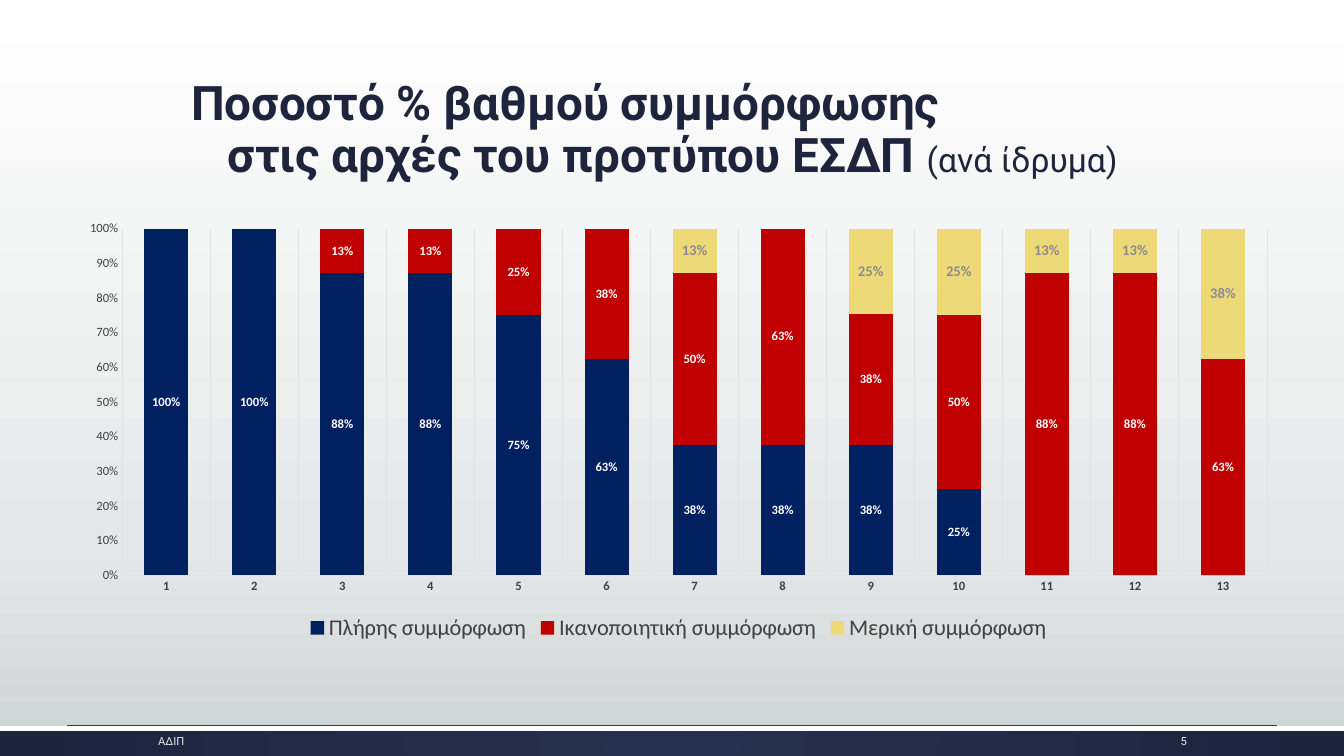
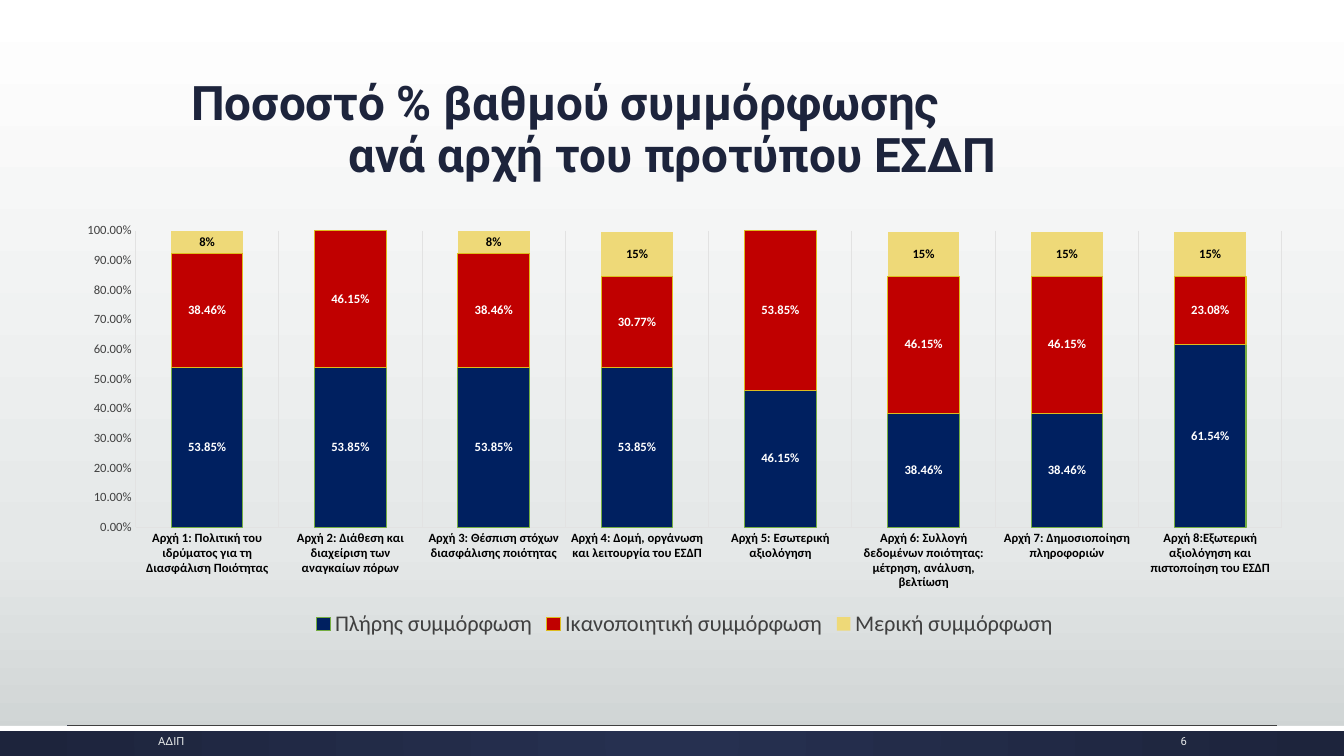
from dataclasses import dataclass

from lxml.etree import SubElement
from pptx import Presentation
from pptx.chart.data import CategoryChartData
from pptx.dml.color import RGBColor as Rgb
from pptx.enum.chart import XL_CHART_TYPE as ChartType
from pptx.enum.chart import XL_LEGEND_POSITION as LegendPosition
from pptx.enum.chart import XL_TICK_MARK as TickMark
from pptx.enum.shapes import MSO_CONNECTOR as Connector
from pptx.enum.shapes import MSO_SHAPE as Preset
from pptx.enum.text import MSO_ANCHOR as Anchor
from pptx.enum.text import PP_ALIGN as Align
from pptx.oxml import parse_xml
from pptx.oxml.ns import nsdecls, qn
from pptx.util import Inches, Pt


@dataclass(frozen=True)
class Theme:
    """Colours, fonts and type sizes of the deck."""

    heading_font: str = "Roboto"
    chart_font: str = "Calibri"
    navy: str = "1D243C"
    navy_light: str = "263050"
    white: str = "FFFFFF"
    black: str = "000000"
    mist: str = "E5E8E8"
    fog: str = "CDD2D2"
    grid: str = "E2E2E2"
    chart_text: str = "404040"
    muted: str = "8C8C8C"
    full: str = "002060"
    satisfactory: str = "C00000"
    partial: str = "EED978"
    spare: str = "AC9FC6"
    green_edge: str = "74AD41"
    gold_edge: str = "DEBC1D"
    title_size: float = 34
    subtitle_size: float = 24
    footer_size: float = 8
    axis_size: float = 9
    label_size: float = 9
    large_label_size: float = 10.5
    legend_size: float = 16


THEME = Theme()


@dataclass(frozen=True)
class Level:
    """One compliance level; without a label format it stays unlabelled."""

    name: str
    values: list
    color: str
    label_color: str = THEME.white
    label_size: float = THEME.label_size
    label_format: str = "0%;;"
    edge: str = ""


FULL, SATISFACTORY, PARTIAL = (
    "Πλήρης συμμόρφωση",
    "Ικανοποιητική συμμόρφωση",
    "Μερική συμμόρφωση",
)
TITLE_START = "Ποσοστό % βαθμού συμμόρφωσης"
FOOTER = "ΑΔΙΠ"
PRINCIPLES = [
    "Αρχή 1: Πολιτική του ιδρύματος για τη Διασφάλιση Ποιότητας",
    "Αρχή 2: Διάθεση και διαχείριση των αναγκαίων πόρων",
    "Αρχή 3: Θέσπιση στόχων διασφάλισης ποιότητας",
    "Αρχή 4: Δομή, οργάνωση και λειτουργία του ΕΣΔΠ",
    "Αρχή 5: Εσωτερική αξιολόγηση",
    "Αρχή 6: Συλλογή δεδομένων ποιότητας: μέτρηση, ανάλυση, βελτίωση",
    "Αρχή 7: Δημοσιοποίηση πληροφοριών",
    "Αρχή 8:Εξωτερική αξιολόγηση και πιστοποίηση του ΕΣΔΠ",
]
BY_INSTITUTION = [
    Level(FULL, [1, 1, 0.88, 0.88, 0.75, 0.63, 0.38, 0.38, 0.38, 0.25, 0, 0, 0],
          THEME.full),
    Level(SATISFACTORY,
          [0, 0, 0.13, 0.13, 0.25, 0.38, 0.5, 0.63, 0.38, 0.5, 0.88, 0.88, 0.63],
          THEME.satisfactory),
    Level(PARTIAL, [0, 0, 0, 0, 0, 0, 0.13, 0, 0.25, 0.25, 0.13, 0.13, 0.38],
          THEME.partial, THEME.muted, THEME.large_label_size),
]
BY_PRINCIPLE = [
    Level(FULL, [0.5385, 0.5385, 0.5385, 0.5385, 0.4615, 0.3846, 0.3846, 0.6154],
          THEME.full, label_format="0.00%", edge=THEME.green_edge),
    Level(SATISFACTORY,
          [0.3846, 0.4615, 0.3846, 0.3077, 0.5385, 0.4615, 0.4615, 0.2308],
          THEME.satisfactory, label_format="0.00%", edge=THEME.gold_edge),
    Level(PARTIAL, [0.08, 0, 0.08, 0.15, 0, 0.15, 0.15, 0.15],
          THEME.partial, THEME.black),
    Level("Series 4", [0] * len(PRINCIPLES), THEME.spare, label_format=""),
]


def style_font(font, size, color, bold=False, name=THEME.chart_font):
    """Set face, size, colour and weight of a font."""
    font.name, font.size, font.bold = name, Pt(size), bold
    font.color.rgb = Rgb.from_string(color)


def fill_solid(fill, color):
    """Fill with one colour."""
    fill.solid()
    fill.fore_color.rgb = Rgb.from_string(color)


def stroke(line, color, width=0.75):
    """Give a line its colour and width."""
    fill_solid(line.fill, color)
    line.width = Pt(width)


def fill_gradient(fill, owner, stops, radial=False):
    """Fill with a vertical or radial gradient of (percent, colour) stops."""
    fill.gradient()
    gradient = owner.find(".//" + qn("a:gradFill"))
    for child in list(gradient):
        gradient.remove(child)
    stop_list = SubElement(gradient, qn("a:gsLst"))
    for percent, color in stops:
        stop = SubElement(stop_list, qn("a:gs"), pos=str(percent * 1000))
        SubElement(stop, qn("a:srgbClr"), val=color)
    if radial:
        focus = SubElement(gradient, qn("a:path"), path="circle")
        SubElement(focus, qn("a:fillToRect"), dict.fromkeys("ltrb", "50000"))
    else:
        SubElement(gradient, qn("a:lin"), ang="5400000", scaled="0")


def add_band(page, top, height):
    """Add a full-width band without outline."""
    band = page.shapes.add_shape(
        Preset.RECTANGLE, 0, Inches(top), Inches(13.33), Inches(height))
    band.shadow.inherit = False
    band.line.fill.background()
    return band


def add_rule(page):
    """Add the thin line above the footer."""
    rule = page.shapes.add_connector(
        Connector.STRAIGHT, Inches(0.67), Inches(7.19), Inches(12.67), Inches(7.19))
    stroke(rule.line, THEME.chart_text, 0.25)
    SubElement(rule.element.spPr, qn("a:effectLst"))


def add_text_box(page, left, top, width, height, text, anchor):
    """Add a wrapping text box and return its text frame."""
    box = page.shapes.add_textbox(*map(Inches, (left, top, width, height)))
    frame = box.text_frame
    frame.word_wrap = True
    frame.vertical_anchor = anchor
    frame.text = text
    return frame


def add_footer_text(page, left, width, text, align):
    """Add one small text in the footer band."""
    frame = add_text_box(page, left, 7.22, width, 0.26, text, Anchor.MIDDLE)
    para = frame.paragraphs[0]
    para.alignment = align
    style_font(para.runs[0].font, THEME.footer_size, THEME.mist,
               name=THEME.heading_font)


def add_title(page, second_line, aside):
    """Add the two-line title, with an optional lighter aside."""
    frame = add_text_box(page, 1.47, 0.51, 10.4, 1.35,
                         f"{TITLE_START}\n{second_line}", Anchor.BOTTOM)
    first, second = frame.paragraphs
    first.alignment, second.alignment = Align.LEFT, Align.CENTER
    first._p.get_or_add_pPr().set("marL", str(Inches(0.33)))
    for para in frame.paragraphs:
        para.line_spacing = 0.9
        style_font(para.runs[0].font, THEME.title_size, THEME.navy, True,
                   THEME.heading_font)
    if aside:
        span = second.add_run()
        span.text = aside
        style_font(span.font, THEME.subtitle_size, THEME.navy,
                   name=THEME.heading_font)


def add_page(deck, number, second_line, aside=""):
    """Add a page with footer and title."""
    page = deck.slides.add_slide(deck.slide_layouts[6])
    footer_band = add_band(page, 7.2, 0.3)
    fill_gradient(footer_band.fill, footer_band.element,
                  [(0, THEME.navy_light), (100, THEME.navy)], radial=True)
    fill_solid(add_band(page, 7.2, 0.05).fill, THEME.white)
    add_rule(page)
    add_footer_text(page, 1.47, 7.83, FOOTER, Align.LEFT)
    add_footer_text(page, 11.17, 0.7, str(number), Align.RIGHT)
    add_title(page, second_line, aside)
    return page


def style_axes(chart, category_color, value_format):
    """Format both axes of a column chart."""
    categories, values = chart.category_axis, chart.value_axis
    for axis in (categories, values):
        axis.major_tick_mark = axis.minor_tick_mark = TickMark.NONE
    categories.has_major_gridlines = True
    stroke(categories.major_gridlines.format.line, THEME.grid)
    stroke(categories.format.line, THEME.grid)
    style_font(categories.tick_labels.font, THEME.axis_size, category_color, True)
    values.has_major_gridlines = False
    values.format.line.fill.background()
    values.minimum_scale, values.maximum_scale, values.major_unit = 0, 1, 0.1
    values.tick_labels.number_format = value_format
    values.tick_labels.number_format_is_linked = False
    style_font(values.tick_labels.font, THEME.axis_size, THEME.chart_text)


def hide_legend_entry(legend, index):
    """Leave one series out of the legend."""
    entry = parse_xml(f'<c:legendEntry {nsdecls("c")}><c:idx val="{index}"/>'
                      '<c:delete val="1"/></c:legendEntry>')
    legend._element.find(qn("c:legendPos")).addnext(entry)


def style_level(series, level):
    """Colour one series and its value labels."""
    fill_solid(series.format.fill, level.color)
    if level.edge:
        stroke(series.format.line, level.edge)
    if level.label_format:
        labels = series.data_labels
        labels.show_value = True
        labels.number_format = level.label_format
        labels.number_format_is_linked = False
        style_font(labels.font, level.label_size, level.label_color, True)


def add_column_chart(page, place, kind, categories, levels,
                     category_color, value_format):
    """Add a stacked column chart of compliance levels."""
    data = CategoryChartData(number_format=value_format)
    data.categories = categories
    for level in levels:
        data.add_series(level.name, level.values)
    chart = page.shapes.add_chart(kind, *map(Inches, place), data).chart
    chart.has_title = False
    style_font(chart.font, 10, THEME.chart_text)
    chart.has_legend = True
    chart.legend.position = LegendPosition.BOTTOM
    chart.legend.include_in_layout = False
    style_font(chart.legend.font, THEME.legend_size, THEME.chart_text)
    plot = chart.plots[0]
    plot.gap_width = plot.overlap = 100
    plot.vary_by_categories = False
    style_axes(chart, category_color, value_format)
    for index, (series, level) in enumerate(zip(plot.series, levels)):
        style_level(series, level)
        if not any(level.values):
            hide_legend_entry(chart.legend, index)


def main():
    """Build and save the deck."""
    deck = Presentation()
    deck.slide_width, deck.slide_height = Inches(13.33), Inches(7.5)
    master = deck.slide_master
    fill_gradient(master.background.fill, master.element,
                  [(0, THEME.white), (72, THEME.mist), (100, THEME.fog)])

    page = add_page(deck, 5, "στις αρχές του προτύπου ΕΣΔΠ ", "(ανά ίδρυμα)")
    add_column_chart(page, (0.65, 2.11, 12.16, 4.3), ChartType.COLUMN_STACKED_100,
                     [str(number) for number in range(1, 14)], BY_INSTITUTION,
                     THEME.chart_text, "0%")

    page = add_page(deck, 6, "ανά αρχή του προτύπου ΕΣΔΠ")
    add_column_chart(page, (0.62, 2.13, 12.34, 4.24), ChartType.COLUMN_STACKED,
                     PRINCIPLES, BY_PRINCIPLE, THEME.black, "0.00%")
    deck.save("out.pptx")


if __name__ == "__main__":
    main()
